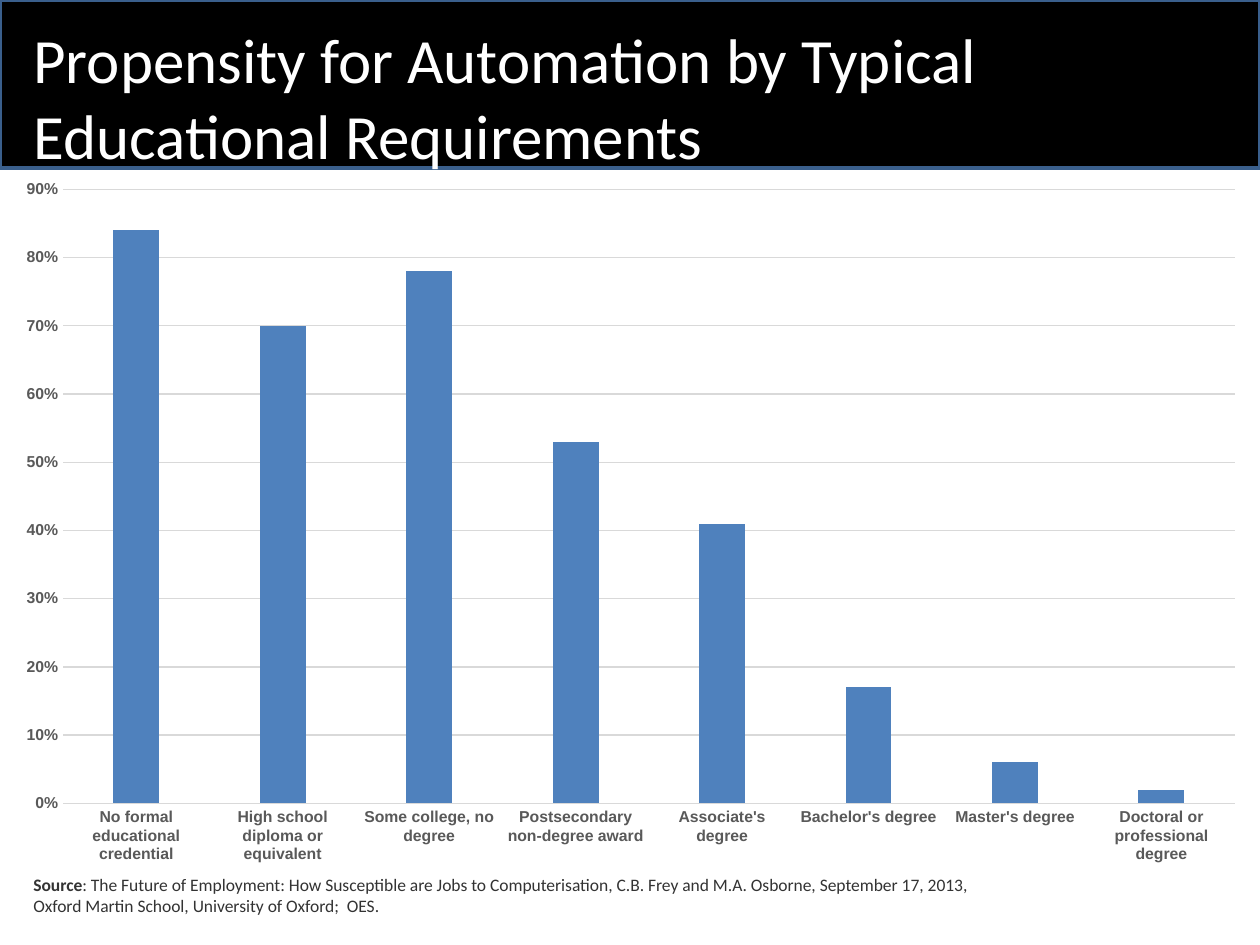
import pptx
import pptx.chart.data
import pptx.dml.color
import pptx.enum.chart
import pptx.enum.shapes
import pptx.enum.text
import pptx.oxml
import pptx.util
from pptx.oxml.ns import nsdecls

RGBColor = pptx.dml.color.RGBColor
Pt = pptx.util.Pt

BLACK = RGBColor(0x00, 0x00, 0x00)
WHITE = RGBColor(0xFF, 0xFF, 0xFF)
BAND_LINE = RGBColor(0x3A, 0x5F, 0x8C)
BAR = RGBColor(0x4F, 0x81, 0xBD)
GRID = RGBColor(0xD9, 0xD9, 0xD9)
AXIS_TEXT = RGBColor(0x59, 0x59, 0x59)
SOURCE_TEXT = RGBColor(0x33, 0x33, 0x33)

# The slide is a grid of 120 columns and 90 rows, each 1/12 inch.
UNIT = pptx.util.Inches(1) // 12
COLS, ROWS = 120, 90

TITLE = "Propensity for Automation by Typical Educational Requirements"
SHARES = {
    "No formal educational credential": 0.84,
    "High school diploma or equivalent": 0.70,
    "Some college, no degree": 0.78,
    "Postsecondary non-degree award": 0.53,
    "Associate's degree": 0.41,
    "Bachelor's degree": 0.17,
    "Master's degree": 0.06,
    "Doctoral or professional degree": 0.02,
}
SOURCE_LINES = [
    [("Source", True),
     (": The Future of Employment: How Susceptible are Jobs to Computerisation, "
      "C.B. Frey and M.A. Osborne, September 17, 2013,", False)],
    [("Oxford Martin School, University of Oxford;  OES.", False)],
]


def grid_box(col, row, cols, rows):
    """Turn grid units into left, top, width and height."""
    return [round(n * UNIT) for n in (col, row, cols, rows)]


def style_font(font, name, size, color, bold=None):
    font.name, font.size, font.bold = name, Pt(size), bold
    font.color.rgb = color


def add_title_band(slide, box):
    left, top, width, height = box
    band = slide.shapes.add_shape(
        pptx.enum.shapes.MSO_SHAPE.RECTANGLE, left, top, width, height)
    band.shadow.inherit = False
    band.fill.solid()
    band.fill.fore_color.rgb = BLACK
    band.line.color.rgb = BAND_LINE
    band.line.width = Pt(2)

    title = slide.shapes.add_textbox(
        left + 2 * UNIT, top + UNIT, 99 * UNIT, height - 3 * UNIT)
    tf = title.text_frame
    tf.word_wrap = True
    tf.margin_top = UNIT
    p = tf.paragraphs[0]
    p.text = TITLE
    style_font(p.font, "Calibri", 36, WHITE)


def set_plot_area(chart, x, y, w, h):
    """Fix the inner plot area, as shares of the chart."""
    plot_area = chart._chartSpace.chart.plotArea
    for old in plot_area.findall(pptx.oxml.ns.qn("c:layout")):
        plot_area.remove(old)
    plot_area.insert(0, pptx.oxml.parse_xml(
        f'<c:layout {nsdecls("c")}><c:manualLayout>'
        '<c:layoutTarget val="inner"/><c:xMode val="edge"/><c:yMode val="edge"/>'
        f'<c:x val="{x}"/><c:y val="{y}"/><c:w val="{w}"/><c:h val="{h}"/>'
        '</c:manualLayout></c:layout>'))


def add_share_chart(slide, box):
    data = pptx.chart.data.CategoryChartData(number_format="0%")
    data.categories = list(SHARES)
    data.add_series("Series 1", list(SHARES.values()))
    chart = slide.shapes.add_chart(
        pptx.enum.chart.XL_CHART_TYPE.COLUMN_CLUSTERED, *box, data).chart
    chart.has_title = False
    chart.has_legend = False
    style_font(chart.font, "Arial", 10, BLACK)
    set_plot_area(chart, 0.05, 0.03, 0.93, 0.86)

    plot = chart.plots[0]
    plot.gap_width, plot.overlap = 219, -27
    plot.vary_by_categories = False
    fill = plot.series[0].format.fill
    fill.solid()
    fill.fore_color.rgb = BAR

    for axis in (chart.category_axis, chart.value_axis):
        axis.major_tick_mark = pptx.enum.chart.XL_TICK_MARK.NONE
        axis.minor_tick_mark = pptx.enum.chart.XL_TICK_MARK.NONE
        style_font(axis.tick_labels.font, "Arial", 9, AXIS_TEXT, True)

    values = chart.value_axis
    values.minimum_scale, values.maximum_scale, values.major_unit = 0, 0.9, 0.1
    values.tick_labels.number_format = "0%"
    values.tick_labels.number_format_is_linked = False
    values.format.line.fill.background()
    values.has_major_gridlines = True
    for line in (chart.category_axis.format.line, values.major_gridlines.format.line):
        line.color.rgb = GRID
        line.width = Pt(0.75)


def add_source(slide, box):
    tf = slide.shapes.add_textbox(*box).text_frame
    tf.word_wrap = True
    tf.vertical_anchor = pptx.enum.text.MSO_ANCHOR.MIDDLE
    for i, runs in enumerate(SOURCE_LINES):
        p = tf.add_paragraph() if i else tf.paragraphs[0]
        style_font(p.font, "Calibri", 10, SOURCE_TEXT)
        for text, bold in runs:
            r = p.add_run()
            r.text = text
            r.font.bold = bold


def main():
    prs = pptx.Presentation()
    prs.slide_width, prs.slide_height = COLS * UNIT, ROWS * UNIT
    slide = prs.slides.add_slide(prs.slide_layouts[6])
    add_title_band(slide, grid_box(0, 0, COLS, 16))
    add_share_chart(slide, grid_box(0, 16, COLS, 68))
    add_source(slide, grid_box(2, 82.5, 121, 5.5))
    prs.save("out.pptx")


if __name__ == "__main__":
    main()
